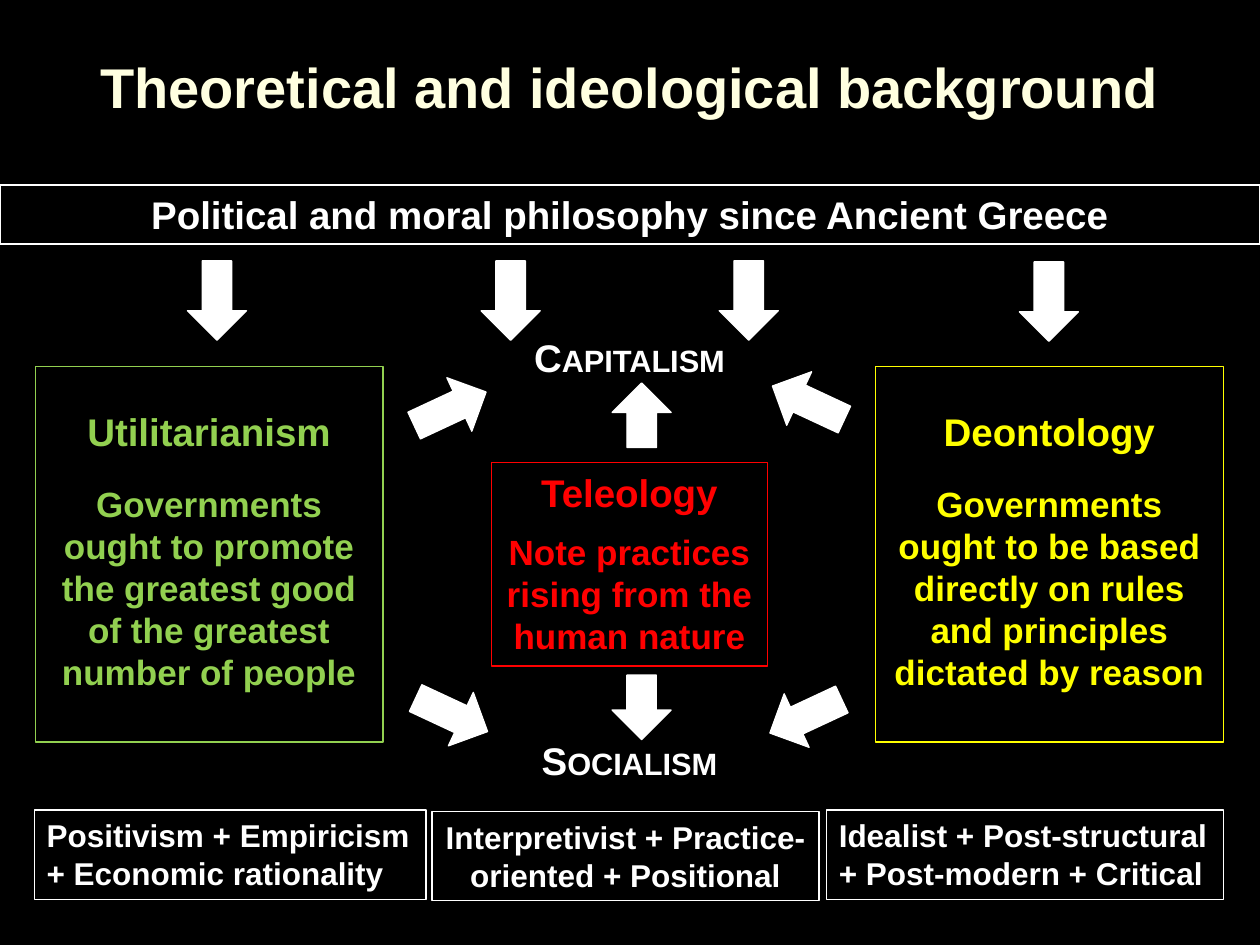
from pptx import Presentation
from pptx.dml.color import RGBColor
from pptx.enum.shapes import MSO_SHAPE
from pptx.enum.text import MSO_ANCHOR, PP_ALIGN
from pptx.util import Cm, Pt

THEME = {
    "font": "Arial",
    "black": "000000", "white": "FFFFFF", "cream": "FFFFE0",
    "green": "92D050", "yellow": "FFFF00", "red": "FF0000",
    "title": 32, "heading": 22, "body": 20, "small": 18, "line": 0.75,
}

TITLE = "Theoretical and ideological background"
BANNER = "Political and moral philosophy since Ancient Greece"
THEORIES = [
    ("Utilitarianism",
     "Governments ought to promote the greatest good of the greatest number of people",
     "green", (0.71, 7.39, 7.01, 7.57), 0.84, 16),
    ("Teleology", "Note practices rising from the human nature",
     "red", (9.91, 9.32, 5.56, 4.11), 0.13, 9),
    ("Deontology",
     "Governments ought to be based directly on rules and principles dictated by reason",
     "yellow", (17.65, 7.39, 7.01, 7.57), 0.84, 16),
]
SYSTEMS = [("Capitalism", 6.6), ("Socialism", 14.73)]
METHODS = [
    (["Positivism + Empiricism", "+ Economic rationality"],
     (0.69, 16.33, 7.9, 1.8), PP_ALIGN.LEFT),
    (["Interpretivist + Practice- oriented + Positional"],
     (8.71, 16.36, 7.8, 1.8), PP_ALIGN.CENTER),
    (["Idealist + Post-structural", "+ Post-modern + Critical"],
     (16.66, 16.33, 8.0, 1.8), PP_ALIGN.LEFT),
]
ARROW_WIDTH, LONG, SHORT = 1.19, 1.6, 1.3
ARROWS = [
    (3.78, 5.26, LONG, 0), (9.7, 5.26, LONG, 0),
    (14.5, 5.26, LONG, 0), (20.55, 5.28, LONG, 0),
    (8.48, 7.44, LONG, 245), (15.7, 7.32, LONG, 115),
    (8.51, 13.61, LONG, 295), (15.65, 13.64, LONG, 65),
    (12.34, 7.72, SHORT, 180), (12.34, 13.61, SHORT, 0),
]


def color(name):
    return RGBColor.from_string(THEME[name])


def write(shape, lines, sizes, tint, align=PP_ALIGN.CENTER):
    frame = shape.text_frame
    frame.word_wrap = True
    frame.vertical_anchor = MSO_ANCHOR.TOP
    frame.text = "\n".join(lines)
    for paragraph, size in zip(frame.paragraphs, sizes):
        paragraph.alignment = align
        for span in paragraph.runs:
            span.font.name = THEME["font"]
            span.font.size = Pt(THEME[size])
            span.font.bold = True
            span.font.color.rgb = color(tint)
    return frame


def add_shape(page, kind, place, tint, filled=False):
    shape = page.shapes.add_shape(kind, *map(Cm, place))
    shape.shadow.inherit = False
    if filled:
        shape.fill.solid()
        shape.fill.fore_color.rgb = color(tint)
    else:
        shape.fill.background()
    shape.line.color.rgb = color(tint)
    shape.line.width = Pt(THEME["line"])
    return shape


def main():
    deck = Presentation()
    deck.slide_width, deck.slide_height = Cm(25.4), Cm(19.05)
    page = deck.slides.add_slide(deck.slide_layouts[5])
    page.background.fill.solid()
    page.background.fill.fore_color.rgb = color("black")

    title = page.shapes.title
    title.left, title.top, title.width, title.height = map(Cm, (0, 0.13, 25.4, 3.2))
    write(title, [TITLE], ["title"], "cream").vertical_anchor = MSO_ANCHOR.MIDDLE

    banner = add_shape(page, MSO_SHAPE.RECTANGLE, (0, 3.73, 25.4, 1.19), "white")
    write(banner, [BANNER], ["heading"], "white")

    for heading, body, tint, place, inset, gap in THEORIES:
        box = add_shape(page, MSO_SHAPE.RECTANGLE, place, tint)
        frame = write(box, [heading, body], ["heading", "body"], tint)
        frame.margin_top = Cm(inset)
        frame.paragraphs[0].space_after = Pt(gap)

    for name, top in SYSTEMS:
        label = page.shapes.add_textbox(Cm(10.44), Cm(top), Cm(4.5), Cm(1.19))
        frame = write(label, [name], ["heading"], "white")
        frame.paragraphs[0].runs[0]._r.get_or_add_rPr().set("cap", "small")

    for lines, place, align in METHODS:
        box = add_shape(page, MSO_SHAPE.RECTANGLE, place, "white")
        write(box, lines, ["small"] * len(lines), "white", align)

    for left, top, length, angle in ARROWS:
        arrow = add_shape(page, MSO_SHAPE.DOWN_ARROW,
                          (left, top, ARROW_WIDTH, length), "white", filled=True)
        arrow.rotation = angle

    deck.save("out.pptx")


if __name__ == "__main__":
    main()
